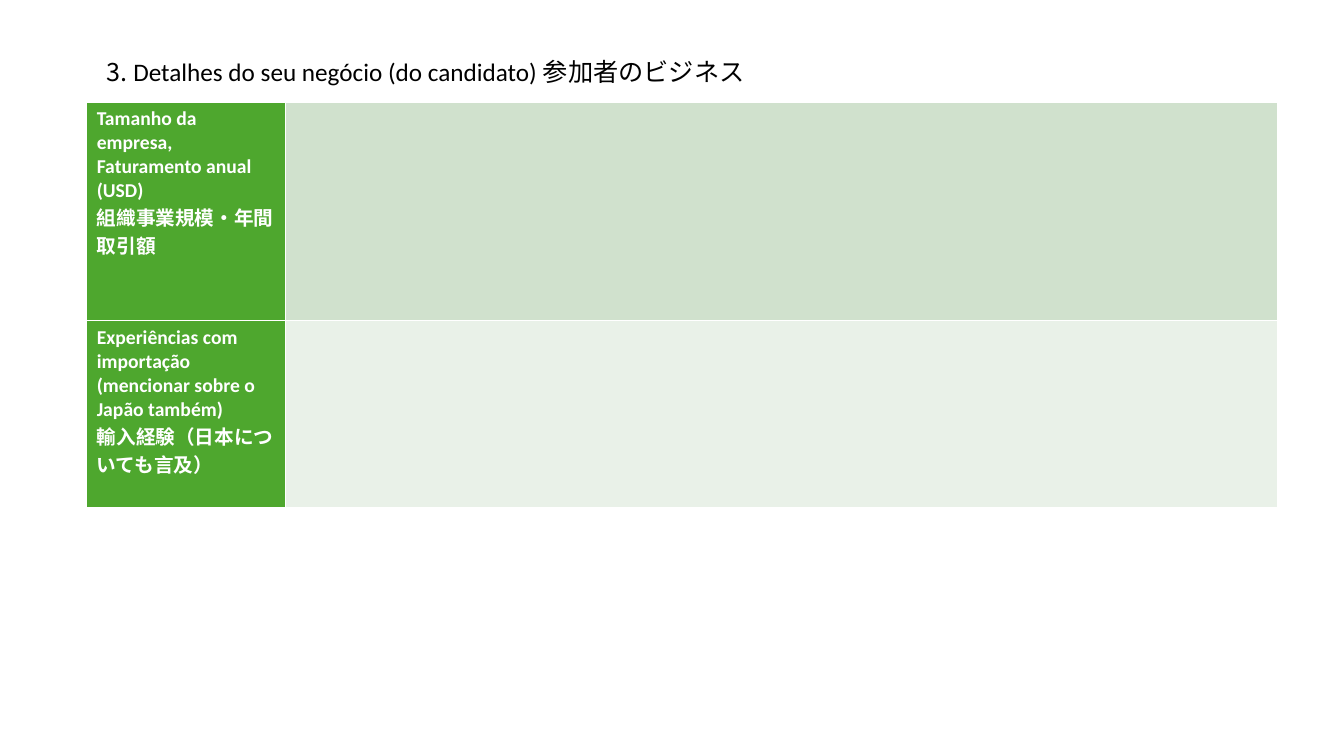
import pptx
import pptx.dml.color
import pptx.enum.text
import pptx.oxml
import pptx.oxml.ns
import pptx.util

SLIDE_WIDTH = pptx.util.Inches(13.33)
SLIDE_HEIGHT = pptx.util.Inches(7.5)
LATIN_FONT = "Calibri"
JAPANESE_FONT = "Noto Sans CJK JP"
LABEL_FILL = "4EA72E"
TITLE_RUNS = [
    ("3. ", JAPANESE_FONT),
    ("Detalhes do seu negócio (do candidato) ", LATIN_FONT),
    ("参加者のビジネス", JAPANESE_FONT),
]
BUSINESS_ROWS = [
    (["Tamanho da empresa,", "Faturamento anual (USD)", "組織事業規模・年間取引額"], "D0E1CD"),
    (["Experiências com importação (mencionar sobre o Japão também)",
      "輸入経験（日本についても言及）"], "E9F1E8"),
]
COLUMN_SHARES = (1 / 6, 5 / 6)
ROW_SHARES = (0.54, 0.46)


def color(hex_value):
    return pptx.dml.color.RGBColor.from_string(hex_value)


def add_run(paragraph, text, hex_value, **formats):
    run = paragraph.add_run()
    run.text = text
    for name, value in formats.items():
        setattr(run.font, name, value)
    run.font.color.rgb = color(hex_value)
    east_asian = pptx.oxml.parse_xml(
        f'<a:ea {pptx.oxml.ns.nsdecls("a")} typeface="{JAPANESE_FONT}"/>')
    run.font._element.find(pptx.oxml.ns.qn("a:latin")).addnext(east_asian)


def set_borders(cell, hex_value, points):
    properties = cell._tc.get_or_add_tcPr()
    width = pptx.util.Pt(points)
    for index, side in enumerate(("lnL", "lnR", "lnT", "lnB")):
        properties.insert(index, pptx.oxml.parse_xml(
            f'<a:{side} {pptx.oxml.ns.nsdecls("a")} w="{width}"><a:solidFill>'
            f'<a:srgbClr val="{hex_value}"/></a:solidFill></a:{side}>'))


def add_title(slide, left, top, width, height):
    frame = slide.shapes.add_textbox(left, top, width, height).text_frame
    frame.word_wrap = True
    frame.auto_size = pptx.enum.text.MSO_AUTO_SIZE.SHAPE_TO_FIT_TEXT
    for text, font in TITLE_RUNS:
        add_run(frame.paragraphs[0], text, "000000", name=font, size=pptx.util.Pt(18))


def add_business_table(slide, left, top, width, height):
    table = slide.shapes.add_table(
        len(BUSINESS_ROWS), len(COLUMN_SHARES), left, top, width, height).table
    for column, share in zip(table.columns, COLUMN_SHARES):
        column.width = int(width * share)
    for row, share, (label, answer_fill) in zip(table.rows, ROW_SHARES, BUSINESS_ROWS):
        row.height = int(height * share)
        for cell, fill in zip(row.cells, (LABEL_FILL, answer_fill)):
            cell.fill.solid()
            cell.fill.fore_color.rgb = color(fill)
            set_borders(cell, "FFFFFF", 1)
        frame = row.cells[0].text_frame
        for index, text in enumerate(label):
            paragraph = frame.add_paragraph() if index else frame.paragraphs[0]
            add_run(paragraph, text, "FFFFFF",
                    name=LATIN_FONT, size=pptx.util.Pt(14), bold=True)


def main():
    presentation = pptx.Presentation()
    presentation.slide_width = SLIDE_WIDTH
    presentation.slide_height = SLIDE_HEIGHT
    slide = presentation.slides.add_slide(presentation.slide_layouts[6])
    margin = int(SLIDE_WIDTH * 0.0645)
    add_business_table(slide, margin, int(SLIDE_HEIGHT * 0.135),
                       int(SLIDE_WIDTH * 0.886), int(SLIDE_HEIGHT * 0.536))
    add_title(slide, margin + pptx.util.Inches(0.1), int(SLIDE_HEIGHT * 0.068),
              int(SLIDE_WIDTH * 0.563), int(SLIDE_HEIGHT * 0.053))
    presentation.save("out.pptx")


if __name__ == "__main__":
    main()
